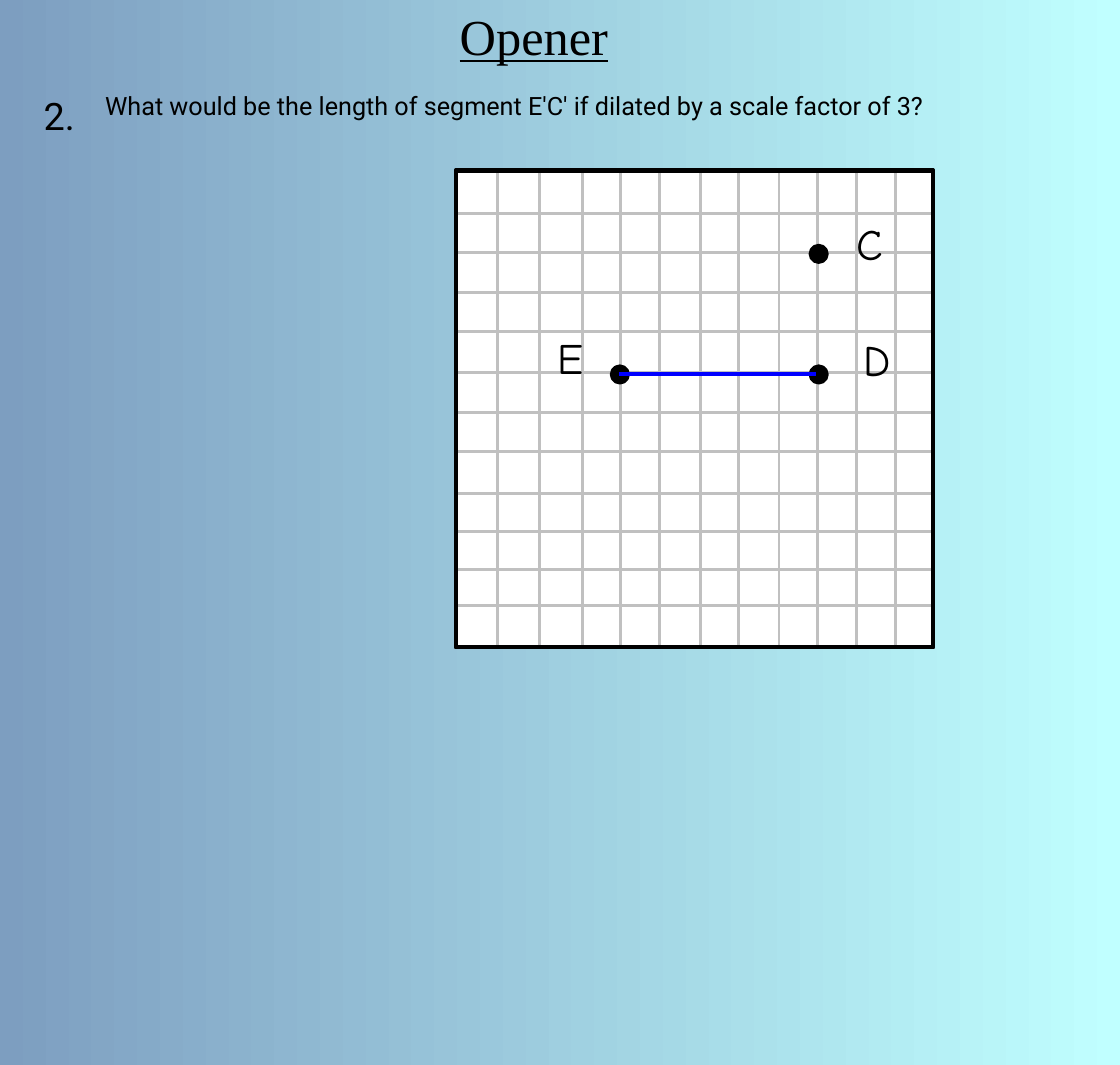
from lxml import etree
from pptx import Presentation
from pptx.dml.color import RGBColor
from pptx.enum import shapes, text
from pptx.oxml import ns
from pptx.util import Cm, Pt

BLACK = RGBColor(0x00, 0x00, 0x00)
WHITE = RGBColor(0xFF, 0xFF, 0xFF)
BLUE = RGBColor(0x00, 0x00, 0xFF)
GRID_GRAY = RGBColor(0xC0, 0xC0, 0xC0)
SKY_LEFT = RGBColor(0x7D, 0x9E, 0xC0)
SKY_RIGHT = RGBColor(0xC0, 0xFF, 0xFF)

# Lengths in centimetres; the grid is hand-spaced.
BOARD_LEFT, BOARD_TOP, BOARD_SIZE = 11.49, 4.3, 12.02
COLUMNS = [12.53, 13.6, 14.68, 15.63, 16.61, 17.65,
           18.61, 19.63, 20.6, 21.59, 22.57]
ROWS = [5.38, 6.37, 7.37, 8.36, 9.39, 10.39,
        11.38, 12.44, 13.4, 14.35, 15.26]
DOT_SIZE = 0.4

# Each point: name, dot centre, label box (left, top, width).
POINTS = [
    ("C", (20.63, 6.4), (21.34, 5.36, 1.24)),
    ("D", (20.63, 9.44), (21.51, 8.28, 1.42)),
    ("E", (15.62, 9.44), (13.79, 8.22, 1.27)),
]


def paint_background(slide):
    fill = slide.background.fill
    fill.gradient()
    fill.gradient_angle = 0
    for stop, color in zip(fill.gradient_stops, (SKY_LEFT, SKY_RIGHT)):
        stop.color.rgb = color


def write(sp, content, font, size, underline=None):
    """Put left-aligned, top-anchored black text into a shape."""
    tf = sp.text_frame
    tf.word_wrap = True
    tf.auto_size = text.MSO_AUTO_SIZE.NONE
    tf.vertical_anchor = text.MSO_ANCHOR.TOP
    p = tf.paragraphs[0]
    p.alignment = text.PP_ALIGN.LEFT
    r = p.add_run()
    r.text = content
    r.font.name = font
    r.font.size = Pt(size)
    r.font.underline = underline
    r.font.color.rgb = BLACK


def add_text(slide, content, left, top, width, height, **fmt):
    sp = slide.shapes.add_textbox(Cm(left), Cm(top), Cm(width), Cm(height))
    write(sp, content, **fmt)


def add_title(slide, content):
    sp = slide.shapes.title
    sp.left, sp.top, sp.width, sp.height = Cm(11.33), Cm(0), Cm(7.19), Cm(1.8)
    write(sp, content, font="Times New Roman", size=36, underline=True)


def add_outlined(slide, kind, left, top, size, fill=None):
    """Add a square-sized shape with a black outline; no fill if none is given."""
    sp = slide.shapes.add_shape(kind, Cm(left), Cm(top), Cm(size), Cm(size))
    sp.shadow.inherit = False
    if fill is None:
        sp.fill.background()
    else:
        sp.fill.solid()
        sp.fill.fore_color.rgb = fill
    sp.line.color.rgb = BLACK
    sp.line.width = Pt(3)


def add_line(slide, x1, y1, x2, y2, color, width):
    line = slide.shapes.add_connector(
        shapes.MSO_CONNECTOR.STRAIGHT, Cm(x1), Cm(y1), Cm(x2), Cm(y2))
    line.line.color.rgb = color
    line.line.width = Pt(width)
    etree.SubElement(line._element.spPr, ns.qn("a:effectLst"))


def add_board(slide):
    square = shapes.MSO_SHAPE.RECTANGLE
    right, bottom = BOARD_LEFT + BOARD_SIZE, BOARD_TOP + BOARD_SIZE
    add_outlined(slide, square, BOARD_LEFT, BOARD_TOP, BOARD_SIZE, fill=WHITE)
    for x in COLUMNS:
        add_line(slide, x, BOARD_TOP + 0.05, x, bottom - 0.05, GRID_GRAY, 2)
    for y in ROWS:
        add_line(slide, BOARD_LEFT, y, right, y, GRID_GRAY, 2)
    add_outlined(slide, square, BOARD_LEFT, BOARD_TOP, BOARD_SIZE)


def add_point(slide, name, center, label):
    x, y = center
    add_outlined(slide, shapes.MSO_SHAPE.OVAL, x - DOT_SIZE / 2,
                 y - DOT_SIZE / 2, DOT_SIZE, fill=BLACK)
    add_text(slide, name, *label, 1.57, font="Comic Neue", size=31)


def main():
    prs = Presentation()
    prs.slide_width, prs.slide_height = Pt(800), Pt(761)
    slide = prs.slides.add_slide(prs.slide_layouts[5])
    paint_background(slide)
    add_title(slide, "Opener")
    add_text(slide, "2.", 0.85, 2.22, 1.42, 1.42, font="Roboto", size=27)
    add_text(slide, "What would be the length of segment E'C' if dilated "
             "by a scale factor of 3?", 2.4, 2.16, 24.16, 1.02,
             font="Roboto", size=18)
    add_board(slide)
    for point in POINTS:
        add_point(slide, *point)
    add_line(slide, 15.6, 9.42, 20.55, 9.42, BLUE, 3)
    prs.save("out.pptx")


if __name__ == "__main__":
    main()
